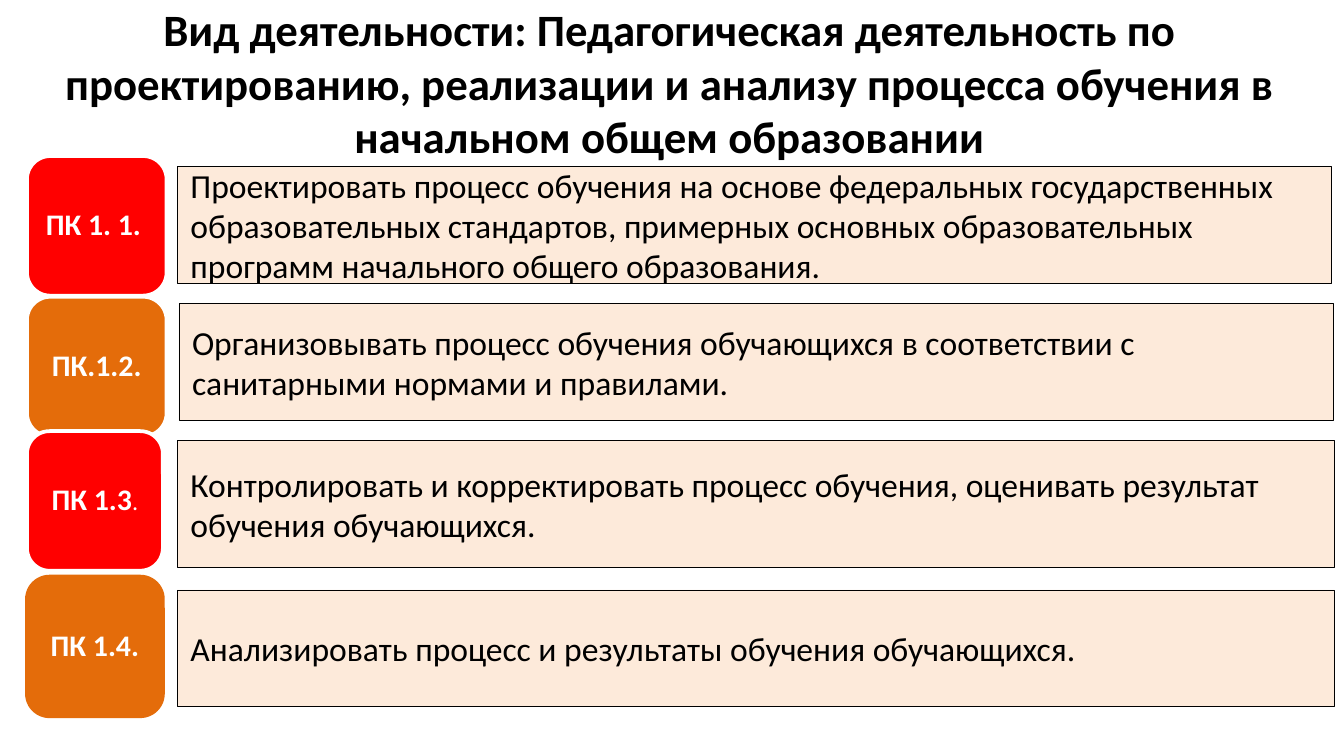
from pptx import Presentation
from pptx.dml.color import RGBColor as Rgb
from pptx.enum.shapes import MSO_SHAPE as Kind
from pptx.enum.text import MSO_ANCHOR as Anchor, MSO_AUTO_SIZE as Fit, PP_ALIGN as Align
from pptx.util import Cm, Pt

HUES = {"red": "FF0000", "orange": "E46C0A", "peach": "FDEADA",
        "white": "FFFFFF", "black": "000000"}
TITLE = ("Вид деятельности: Педагогическая деятельность по проектированию, "
         "реализации и анализу процесса обучения в начальном общем образовании")
HEAD = {"size": Pt(24), "bold": True, "name": "Calibri"}
BODY = {"size": Pt(18), "bold": False, "name": "Calibri"}
CODE = {"size": Pt(16), "bold": True, "name": "Calibri"}
DOT = {"size": Pt(13), "bold": False, "name": "Calibri"}
ROWS = [
    ([("ПК 1. 1. ", CODE)], "red", "white", (0.51, 2.95, 2.64, 2.64),
     "Проектировать процесс обучения на основе федеральных государственных "
     "образовательных стандартов, примерных основных образовательных программ "
     "начального общего образования.", (3.35, 3.15, 21.82, 2.21)),
    ([("ПК.1.2.", CODE)], "orange", "white", (0.51, 5.61, 2.64, 2.64),
     "Организовывать процесс обучения обучающихся в соответствии с "
     "санитарными нормами и правилами.", (3.38, 5.74, 21.82, 2.21)),
    ([("ПК 1.3", CODE), (".", DOT)], "red", "white", (0.51, 8.15, 2.57, 2.64),
     "Контролировать и корректировать процесс обучения, оценивать результат "
     "обучения обучающихся.", (3.35, 8.33, 21.87, 2.39)),
    ([("ПК 1.4.", CODE)], "orange", "orange", (0.51, 10.9, 2.57, 2.64),
     "Анализировать процесс и результаты обучения обучающихся.",
     (3.35, 11.15, 21.87, 2.21)),
]


def tint(name):
    """Return the named colour."""
    return Rgb.from_string(HUES[name])


def assign(item, values):
    """Set attributes from a dict."""
    for key, value in values.items():
        setattr(item, key, value)


def write(shape, runs, hue, align):
    """Write formatted runs as one centred-height paragraph."""
    frame = shape.text_frame
    assign(frame, {"word_wrap": True, "auto_size": Fit.NONE,
                   "vertical_anchor": Anchor.MIDDLE})
    para = frame.paragraphs[0]
    para.alignment = align
    for text, style in runs:
        run = para.add_run()
        run.text = text
        assign(run.font, style)
        run.font.color.rgb = tint(hue)


def add_box(slide, kind, place, fill, edge, width):
    """Add a filled and outlined shape."""
    shape = slide.shapes.add_shape(kind, *map(Cm, place))
    shape.shadow.inherit = False
    shape.fill.solid()
    shape.fill.fore_color.rgb = tint(fill)
    shape.line.color.rgb = tint(edge)
    shape.line.width = Pt(width)
    return shape


def add_badge(slide, runs, fill, edge, place):
    """Add a rounded badge with a skill code."""
    badge = add_box(slide, Kind.ROUNDED_RECTANGLE, place, fill, edge, 2)
    assign(badge.text_frame, {"margin_left": Cm(0.18), "margin_right": Cm(0.18),
                              "margin_top": Cm(0.08), "margin_bottom": Cm(0.08)})
    write(badge, runs, "white", Align.CENTER)
    badge.text_frame.paragraphs[0].line_spacing = 0.9


def add_bar(slide, text, place):
    """Add a bar that describes a skill."""
    bar = add_box(slide, Kind.RECTANGLE, place, "peach", "black", 0.25)
    write(bar, [(text, BODY)], "black", Align.LEFT)


def add_title(slide):
    """Place and fill the title."""
    title = slide.shapes.title
    assign(title, {"left": Cm(0), "top": Cm(0.36),
                   "width": Cm(25.3), "height": Cm(2.39)})
    write(title, [(TITLE, HEAD)], "black", Align.CENTER)


def main():
    """Build and save the slide."""
    deck = Presentation()
    assign(deck, {"slide_width": Cm(25.4), "slide_height": Cm(14.29)})
    slide = deck.slides.add_slide(deck.slide_layouts[5])
    add_title(slide)
    for runs, fill, edge, spot, text, place in ROWS:
        add_badge(slide, runs, fill, edge, spot)
        add_bar(slide, text, place)
    deck.save("out.pptx")


if __name__ == "__main__":
    main()
